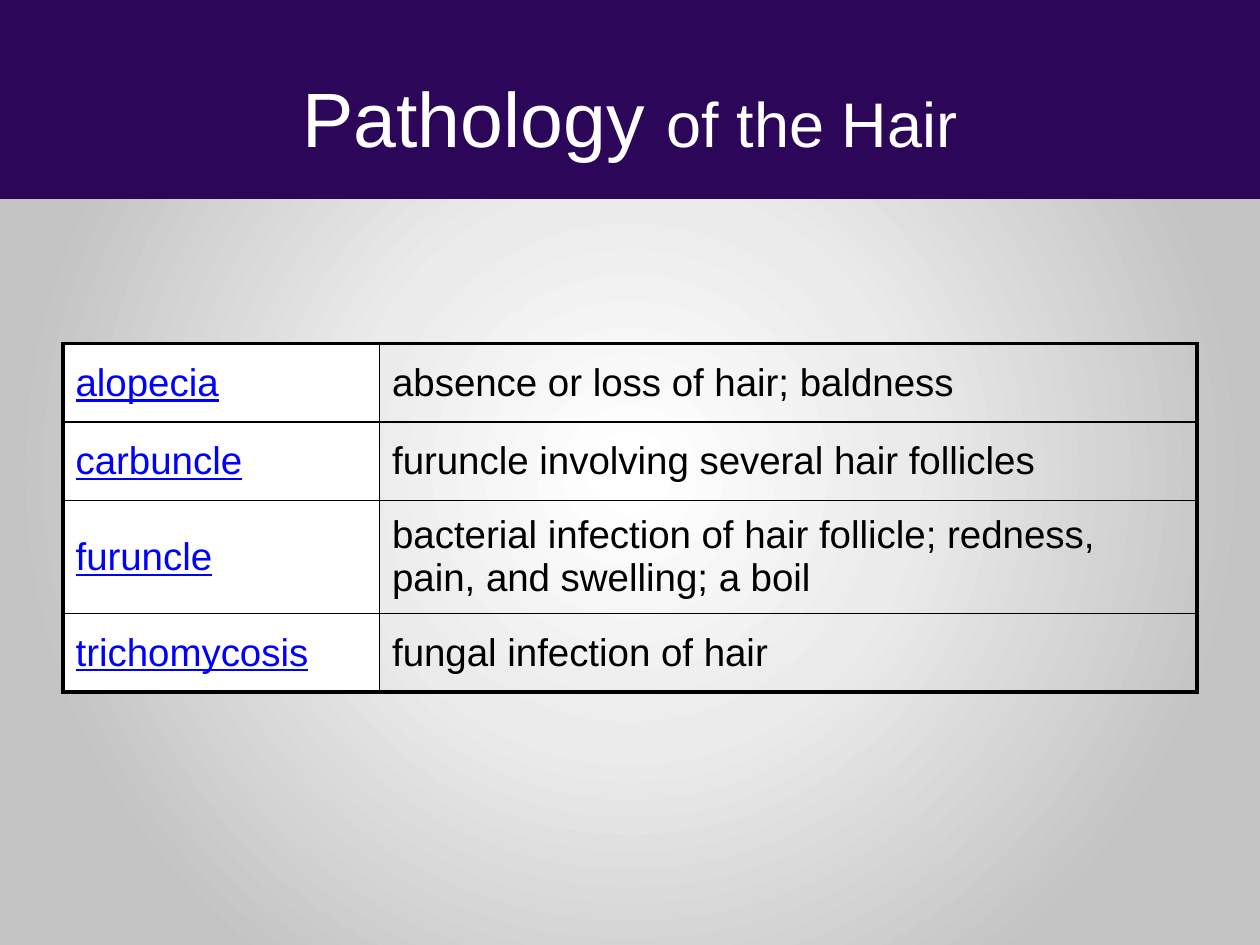
from lxml import etree
from pptx import Presentation
from pptx.dml.color import RGBColor
from pptx.enum.shapes import MSO_SHAPE
from pptx.enum.text import MSO_ANCHOR, PP_ALIGN
from pptx.oxml import parse_xml
from pptx.oxml.ns import nsdecls, qn
from pptx.util import Cm, Pt

RECT = MSO_SHAPE.RECTANGLE
MIDDLE = MSO_ANCHOR.MIDDLE
CENTER = PP_ALIGN.CENTER

HEX = {"band": "2C0659", "white": "FFFFFF", "ink": "000000", "term": "0000FF"}
GLOW = [(2, "FFFFFF"), (35, "EBEBEB"), (79, "C3C3C3")]
TITLE = [("Pathology ", 44), ("of the Hair", 36)]
ROWS = [
    ("alopecia", "absence or loss of hair; baldness"),
    ("carbuncle", "furuncle involving several hair follicles"),
    ("furuncle", "bacterial infection of hair follicle; redness, pain, and swelling; a boil"),
    ("trichomycosis", "fungal infection of hair"),
]
WIDTHS = [6.38, 16.48]
HEIGHTS = [1.58, 1.58, 2.28, 1.58]
FORMATS = [
    {"name": "Arial", "size": Pt(22), "underline": True},
    {"name": "Arial", "size": Pt(22), "underline": False},
]
INKS = ["term", "ink"]
THIN, THICK = 1, 2.25


def color(key):
    return RGBColor.from_string(HEX[key])


def style(font, form, key):
    for name, value in form.items():
        setattr(font, name, value)
    font.color.rgb = color(key)


def paint(slide):
    stops = "".join(
        f'<a:gs pos="{at * 1000}"><a:srgbClr val="{tone}"/></a:gs>' for at, tone in GLOW
    )
    back = parse_xml(
        f'<p:bg {nsdecls("p", "a")}><p:bgPr><a:gradFill rotWithShape="1">'
        f'<a:gsLst>{stops}</a:gsLst><a:path path="circle">'
        '<a:fillToRect l="50000" t="50000" r="50000" b="50000"/></a:path>'
        "</a:gradFill><a:effectLst/></p:bgPr></p:bg>"
    )
    slide.element.cSld.insert(0, back)


def border(cell, sides):
    props = cell._tc.get_or_add_tcPr()
    for spot, (side, width) in enumerate(sides.items()):
        line = etree.Element(qn(f"a:ln{side}"), w=str(Pt(width)))
        fill = etree.SubElement(line, qn("a:solidFill"))
        etree.SubElement(fill, qn("a:srgbClr"), val=HEX["ink"])
        props.insert(spot, line)


def head(slide):
    band = slide.shapes.add_shape(RECT, 0, 0, Cm(25.4), Cm(4.01))
    band.shadow.inherit = False
    band.fill.solid()
    band.fill.fore_color.rgb = color("band")
    band.line.fill.background()
    box = slide.shapes.add_textbox(Cm(1.27), Cm(0.76), Cm(22.86), Cm(3.18))
    frame = box.text_frame
    frame.word_wrap = True
    frame.vertical_anchor = MIDDLE
    para = frame.paragraphs[0]
    para.alignment = CENTER
    for text, size in TITLE:
        run = para.add_run()
        run.text = text
        style(run.font, {"name": "Arial", "size": Pt(size)}, "white")


def grid(slide):
    rows, cols = len(ROWS), len(WIDTHS)
    table = slide.shapes.add_table(
        rows, cols, Cm(1.27), Cm(6.93), Cm(sum(WIDTHS)), Cm(sum(HEIGHTS))
    ).table
    table.first_row = table.horz_banding = False
    for col, width in zip(table.columns, WIDTHS):
        col.width = Cm(width)
    for row, height in zip(table.rows, HEIGHTS):
        row.height = Cm(height)
    for r, texts in enumerate(ROWS):
        for c, text in enumerate(texts):
            cell = table.cell(r, c)
            cell.vertical_anchor = MIDDLE
            if c == 0:
                cell.fill.solid()
                cell.fill.fore_color.rgb = color("white")
            else:
                cell.fill.background()
            edges = {"L": c == 0, "R": c == cols - 1, "T": r == 0, "B": r == rows - 1}
            border(cell, {side: THICK if edge else THIN for side, edge in edges.items()})
            run = cell.text_frame.paragraphs[0].add_run()
            run.text = text
            style(run.font, FORMATS[c], INKS[c])


def main():
    deck = Presentation()
    deck.slide_width, deck.slide_height = Cm(25.4), Cm(19.05)
    slide = deck.slides.add_slide(deck.slide_layouts[6])
    paint(slide)
    head(slide)
    grid(slide)
    deck.save("out.pptx")


if __name__ == "__main__":
    main()
